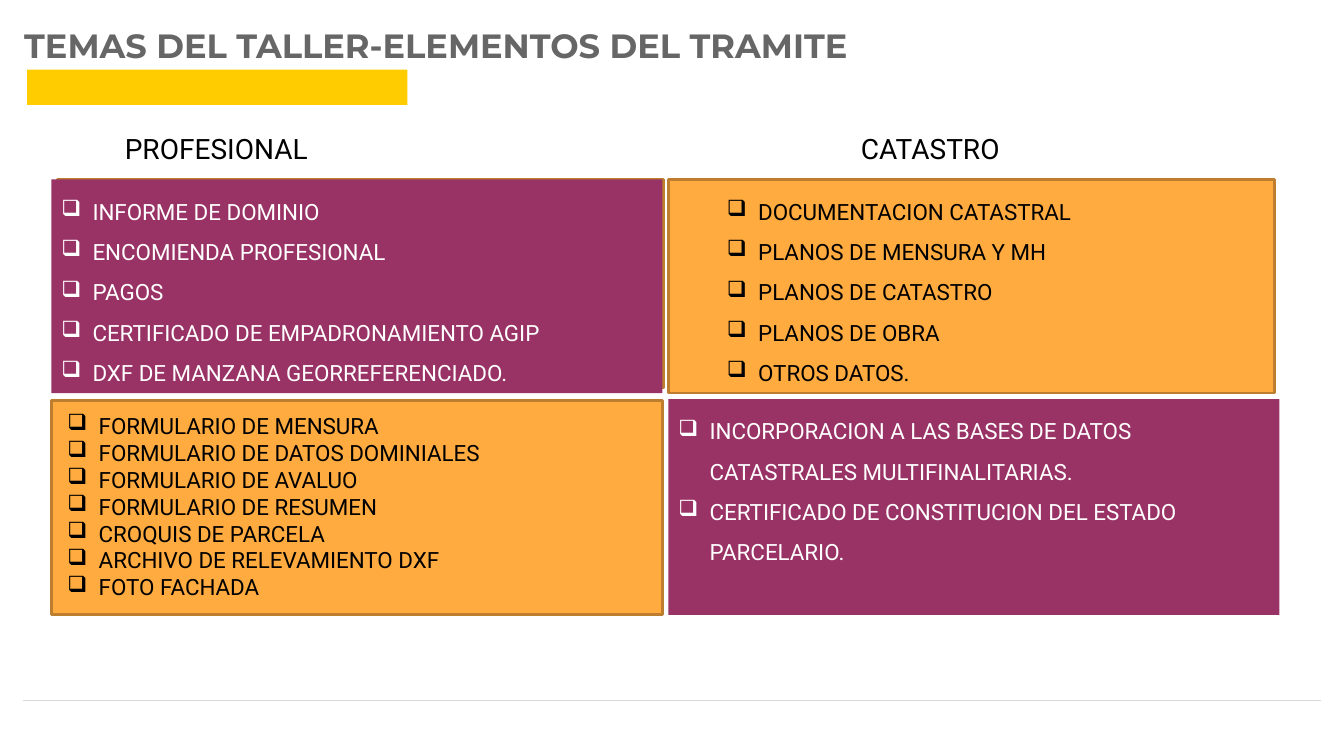
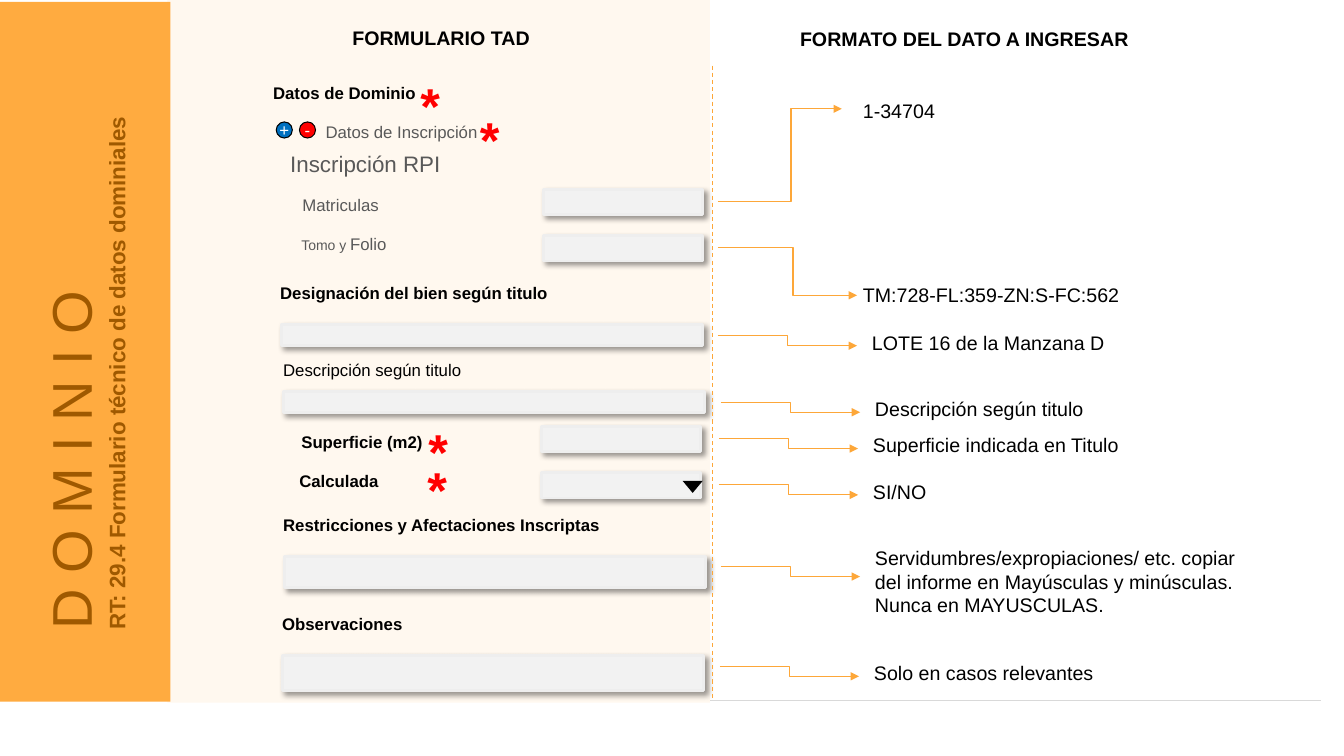
from lxml import etree
from pptx import Presentation
from pptx.dml.color import RGBColor as RGB
from pptx.enum.dml import MSO_LINE
from pptx.enum.shapes import MSO_CONNECTOR as LINK, MSO_SHAPE as SHAPE
from pptx.enum.text import MSO_ANCHOR as ANCHOR, MSO_AUTO_SIZE as AUTO, PP_ALIGN as ALIGN
from pptx.oxml.ns import qn
from pptx.util import Pt

PX = 9144  # 100 px to the inch


class Theme:
    black, white = RGB(0, 0, 0), RGB(255, 255, 255)
    title_gray, text_gray = RGB.from_string("666666"), RGB.from_string("595959")
    yellow, orange = RGB.from_string("FFCC00"), RGB.from_string("FFAB40")
    purple, brown = RGB.from_string("993366"), RGB.from_string("BD7F2F")
    dark_orange, arrow = RGB.from_string("9F5900"), RGB.from_string("FDA739")
    cream, rule = RGB.from_string("FFF8EF"), RGB.from_string("D9D9D9")
    field, field_edge = RGB.from_string("F2F2F2"), RGB.from_string("EEEEEE")
    blue, red = RGB.from_string("0070C0"), RGB.from_string("FF0000")

    title = dict(name="Montserrat", size=Pt(24), bold=True, color=title_gray)
    heading = dict(name="Roboto", size=Pt(20), color=black)
    item = dict(name="Roboto", size=Pt(16))
    side_title = dict(name="Arial", size=Pt(40), bold=False, color=dark_orange)
    side_subtitle = dict(side_title, size=Pt(16), bold=True)
    answer = dict(name="Arial", size=Pt(14), color=black)
    column = dict(answer, bold=True)
    label = dict(name="Arial", size=Pt(12), color=black)
    strong = dict(label, bold=True)
    soft = dict(label, color=text_gray)
    small = dict(soft, size=Pt(10))
    group = dict(soft, size=Pt(16))
    sign = dict(label, color=white)
    star = dict(name="Arial", size=Pt(36), bold=True, color=red)


def draw(slide, kind, box, fill=None, edge=None, weight=2):
    """Place a title, a text box or a preset shape."""
    left, top, width, height = (value * PX for value in box)
    if kind == "title":
        shape = slide.shapes.title
        shape.left, shape.top, shape.width, shape.height = left, top, width, height
    elif kind == "text":
        shape = slide.shapes.add_textbox(left, top, width, height)
    else:
        shape = slide.shapes.add_shape(kind, left, top, width, height)
        shape.shadow.inherit = False
        shape.fill.solid()
        shape.fill.fore_color.rgb = fill
        if edge is None:
            shape.line.fill.background()
        else:
            shape.line.color.rgb = edge
            shape.line.width = Pt(weight)
    return shape


def write(shape, paragraphs, align=ALIGN.LEFT, spacing=None, bullet=None, **frame_format):
    """Fill a shape with paragraphs, each a list of (text, font format) runs."""
    frame = shape.text_frame
    settings = dict(word_wrap=True, auto_size=AUTO.NONE, vertical_anchor=ANCHOR.TOP)
    for name, value in (settings | frame_format).items():
        setattr(frame, name, value)
    for index, runs in enumerate(paragraphs):
        paragraph = frame.add_paragraph() if index else frame.paragraphs[0]
        paragraph.alignment = align
        if spacing:
            paragraph.line_spacing = spacing
        if bullet:
            properties = paragraph._p.get_or_add_pPr()
            properties.set("marL", str(31 * PX))
            properties.set("indent", str(-31 * PX))
            color = etree.SubElement(properties, qn("a:buClr"))
            etree.SubElement(color, qn("a:srgbClr"), val=str(bullet))
            etree.SubElement(properties, qn("a:buChar"), char="❑")
        for text, style in runs:
            run = paragraph.add_run()
            run.text = text
            for name, value in style.items():
                if name == "color":
                    run.font.color.rgb = value
                else:
                    setattr(run.font, name, value)


presentation = Presentation()
presentation.slide_width, presentation.slide_height = 1333 * PX, 750 * PX
title_only = presentation.slide_layouts[5]
topics, form = (presentation.slides.add_slide(title_only) for _ in range(2))

# Slide 1: title and column headings
title = draw(topics, "title", (17, 18, 1280, 50))
write(title, [[("TEMAS DEL TALLER-ELEMENTOS DEL TRAMITE", Theme.title)]],
      **{f"margin_{side}": 7 * PX for side in ("left", "top", "right", "bottom")})
draw(topics, SHAPE.RECTANGLE, (27, 69, 377, 35), Theme.yellow)
for left, heading in ((114, "PROFESIONAL"), (844, "CATASTRO")):
    write(draw(topics, "text", (left, 126, 263, 44)), [[(heading, Theme.heading)]])

# Slide 1: four panels of bulleted items
draw(topics, SHAPE.RECTANGLE, (57, 178, 601, 207), Theme.orange, Theme.brown)
purple_panel = (Theme.purple, None, Theme.white)
orange_panel = (Theme.orange, Theme.brown, Theme.black)
panels = [
    ((51, 178, 606, 212), purple_panel, (10, 5), 1.5, [
        "INFORME DE DOMINIO", "ENCOMIENDA PROFESIONAL", "PAGOS",
        "CERTIFICADO DE EMPADRONAMIENTO AGIP", "DXF DE MANZANA GEORREFERENCIADO."]),
    ((663, 178, 601, 212), orange_panel, (58, 5), 1.5, [
        "DOCUMENTACION CATASTRAL", "PLANOS DE MENSURA Y MH", "PLANOS DE CATASTRO",
        "PLANOS DE OBRA", "OTROS DATOS."]),
    ((663, 396, 606, 214), purple_panel, (10, 5), 1.5, [
        "INCORPORACION A LAS BASES DE DATOS CATASTRALES MULTIFINALITARIAS.",
        "CERTIFICADO DE CONSTITUCION DEL ESTADO PARCELARIO."]),
    ((51, 397, 606, 213), orange_panel, (16, 12), 1.0, [
        "FORMULARIO DE MENSURA", "FORMULARIO DE DATOS DOMINIALES",
        "FORMULARIO DE AVALUO", "FORMULARIO DE RESUMEN", "CROQUIS DE PARCELA",
        "ARCHIVO DE RELEVAMIENTO DXF", "FOTO FACHADA"]),
]
for box, (fill, edge, color), (margin_left, margin_top), spacing, items in panels:
    style = dict(Theme.item, color=color)
    write(draw(topics, SHAPE.RECTANGLE, box, fill, edge), [[(item, style)] for item in items],
          spacing=spacing, bullet=color, margin_left=margin_left * PX, margin_top=margin_top * PX)

# Slide 2: background bands and upright title
draw(form, SHAPE.RECTANGLE, (166, 0, 538, 697), Theme.cream)
draw(form, SHAPE.RECTANGLE, (-12, 2, 181, 694), Theme.orange)
side_title = draw(form, "title", (-224, 276, 613, 104))
side_title.rotation = 270
form.shapes.element.append(side_title.element)
write(side_title, [[("D O M I N I O", Theme.side_title)],
                   [("RT: 29.4 Formulario técnico de datos dominiales", Theme.side_subtitle)]])
for left, top, heading in ((240, 21, "FORMULARIO TAD"), (759, 22, "FORMATO DEL DATO A INGRESAR")):
    write(draw(form, "text", (left, top, 395, 34)), [[(heading, Theme.column)]], ALIGN.CENTER)

# Slide 2: input fields with a soft shadow
fields = [(539, 188, 158, 25), (539, 234, 158, 25), (279, 322, 418, 21), (281, 388, 418, 21),
          (537, 423, 158, 25), (537, 469, 158, 25), (282, 552, 418, 31), (280, 650, 418, 35)]
for box in fields:
    field = draw(form, SHAPE.RECTANGLE, box, Theme.field, Theme.field_edge)
    effects = field.element.spPr.find(qn("a:effectLst"))
    shadow = etree.SubElement(effects, qn("a:outerShdw"), blurRad=str(Pt(4)), dist=str(Pt(3)),
                              dir="2700000", algn="tl", rotWithShape="0")
    shade = etree.SubElement(shadow, qn("a:srgbClr"), val=str(Theme.black))
    etree.SubElement(shade, qn("a:alpha"), val="40000")
draw(form, SHAPE.ISOSCELES_TRIANGLE, (677, 477, 20, 12), Theme.black).rotation = 180

# Slide 2: field labels
labels = [
    (261, 77, 251, 30, [("Datos de Dominio", Theme.strong)]),
    (313, 116, 215, 30, [("Datos de Inscripción", Theme.soft)]),
    (278, 144, 190, 37, [("Inscripción RPI", Theme.group)]),
    (290, 188, 108, 30, [("Matriculas", Theme.soft)]),
    (289, 227, 109, 30, [("Tomo y ", Theme.small), ("Folio", Theme.soft)]),
    (268, 276, 393, 30, [("Designación del bien según titulo", Theme.strong)]),
    (271, 352, 393, 30, [("Descripción según titulo", Theme.label)]),
    (289, 423, 158, 30, [("Superficie (m2)", Theme.strong)]),
    (287, 462, 109, 30, [("Calculada", Theme.strong)]),
    (271, 506, 393, 30, [("Restricciones y Afectaciones Inscriptas", Theme.strong)]),
    (270, 604, 393, 30, [("Observaciones", Theme.strong)]),
]
for *box, runs in labels:
    write(draw(form, "text", box), [runs])

# Slide 2: required marks and add/remove buttons
for left, top in ((407, 69), (466, 102), (415, 412), (414, 450)):
    write(draw(form, "text", (left, top, 39, 71)), [[("*", Theme.star)]])
for left, fill, sign in ((274, Theme.blue, "+"), (297, Theme.red, "-")):
    button = draw(form, SHAPE.OVAL, (left, 121, 16, 16), fill, Theme.black, 0.75)
    write(button, [[(sign, Theme.sign)]], ALIGN.CENTER, word_wrap=False,
          vertical_anchor=ANCHOR.MIDDLE, margin_left=0, margin_top=0, margin_right=0, margin_bottom=0)

# Slide 2: expected answers
answers = [
    (846, 93, 111, 34, ["1-34704"]),
    (846, 276, 277, 34, ["TM:728-FL:359-ZN:S-FC:562"]),
    (855, 323, 277, 34, ["LOTE 16 de la Manzana D"]),
    (858, 389, 277, 34, ["Descripción según titulo"]),
    (856, 425, 277, 34, ["Superficie indicada en Titulo"]),
    (856, 471, 277, 34, ["SI/NO"]),
    (858, 537, 406, 81, [
        "Servidumbres/expropiaciones/ etc. copiar del informe en Mayúsculas y minúsculas.",
        "Nunca en MAYUSCULAS."]),
    (857, 651, 277, 34, ["Solo en casos relevantes"]),
]
for *box, lines in answers:
    write(draw(form, "text", box), [[(line, Theme.answer)] for line in lines])

# Footer rule, column divider and arrows from fields to answers
arrows = [(712, 200, 835, 108, 0.59), (712, 246, 850, 293, 0.54)]
arrows += [(left, top, left + 138, top + 10, 0.5) for left, top in
           ((712, 333), (715, 399), (713, 435), (713, 481), (715, 562), (714, 661))]
links = [(topics, (23, 695, 1310, 695), Theme.rule, None, None),
         (form, (707, 65, 707, 695), Theme.arrow, MSO_LINE.DASH, None)]
links += [(form, ends, Theme.arrow, None, bend) for *ends, bend in arrows]
for slide, ends, color, dash, bend in links:
    kind = LINK.ELBOW if bend else LINK.STRAIGHT
    link = slide.shapes.add_connector(kind, *(value * PX for value in ends))
    link.line.color.rgb = color
    link.line.width = Pt(0.75)
    link.line.dash_style = dash
    properties = link.element.spPr
    if bend:
        etree.SubElement(properties.find(qn("a:ln")), qn("a:tailEnd"), type="triangle")
        adjustments = properties.find(qn("a:prstGeom")).get_or_add_avLst()
        etree.SubElement(adjustments, qn("a:gd"), name="adj1", fmla=f"val {round(bend * 100000)}")
    etree.SubElement(properties, qn("a:effectLst"))
    if slide is topics:  # the footer rule belongs to every slide
        presentation.slide_master.shapes.element.append(link.element)

presentation.save("out.pptx")
